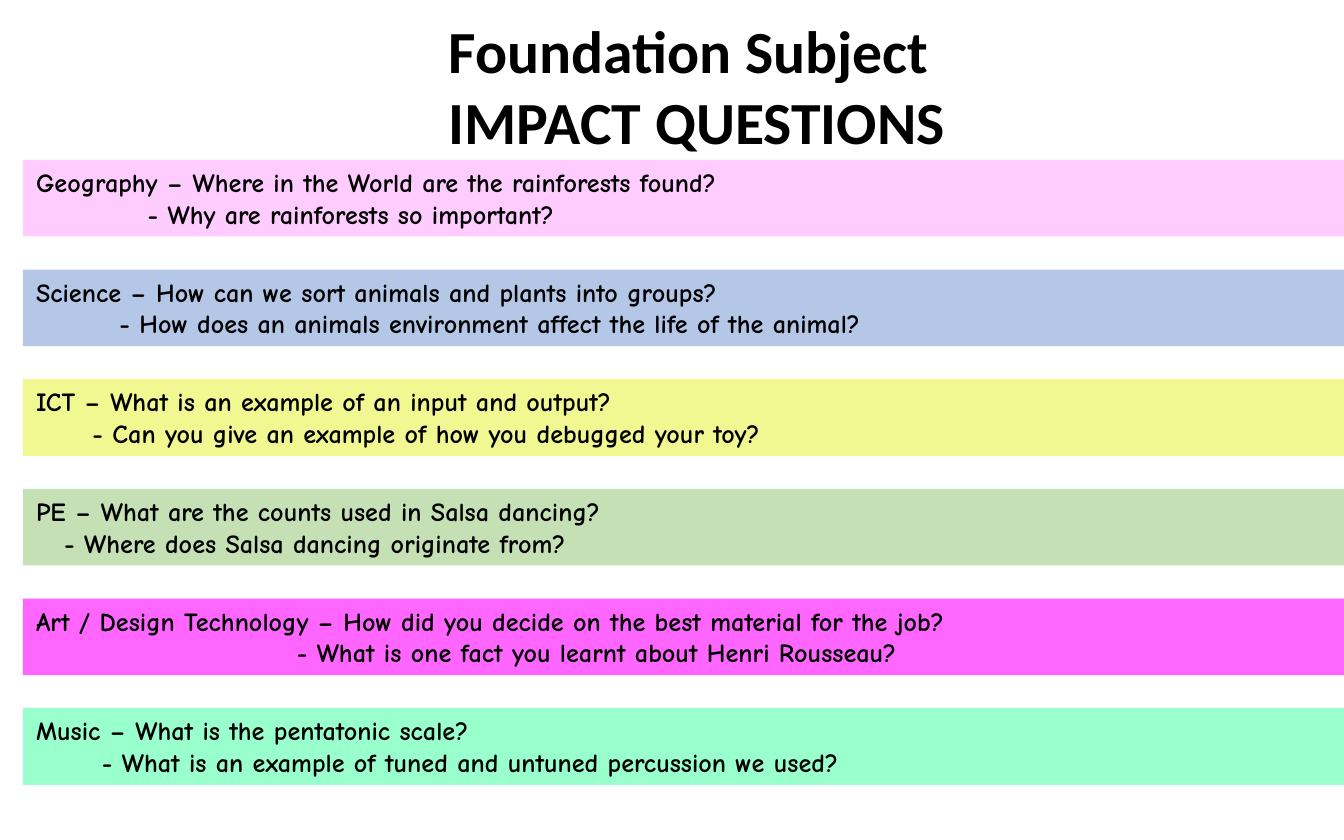
from pptx import Presentation
from pptx.dml.color import RGBColor
from pptx.enum.shapes import MSO_SHAPE
from pptx.enum.text import MSO_ANCHOR, PP_ALIGN
from pptx.util import Inches, Pt

RECT = MSO_SHAPE.RECTANGLE
TOP = MSO_ANCHOR.TOP
LEFT = PP_ALIGN.LEFT

SLIDE_W, SLIDE_H = 10, 6.25
BAR_LEFT, BAR_H = 0.17, 0.57
FIRST_TOP, LAST_TOP = 1.19, 5.27

SUBJECTS = [
    ("FFCCFF", 0.83, "Geography – Where in the World are the rainforests found?",
     "- Why are rainforests so important?"),
    ("B4C7E7", 0.62, "Science – How can we sort animals and plants into groups?",
     "- How does an animals environment affect the life of the animal?"),
    ("F1F892", 0.42, "ICT – What is an example of an input and output?",
     "- Can you give an example of how you debugged your toy?"),
    ("C5E0B4", 0.21, "PE – What are the counts used in Salsa dancing?",
     "- Where does Salsa dancing originate from?"),
    ("FF66FF", 1.94, "Art / Design Technology – How did you decide on the best material for the job?",
     "- What is one fact you learnt about Henri Rousseau?"),
    ("99FFCC", 0.49, "Music – What is the pentatonic scale?",
     "- What is an example of tuned and untuned percussion we used?"),
]


def rgb(value):
    return RGBColor.from_string(value)


def write(tf, text, font, size):
    tf.text = text
    tf.word_wrap = True
    tf.vertical_anchor = TOP
    for p in tf.paragraphs:
        p.alignment = LEFT
        for r in p.runs:
            r.font.name = font
            r.font.size = Pt(size)
            r.font.bold = True
            r.font.color.rgb = rgb("000000")


def add_title(s, text):
    tf = s.shapes.add_textbox(Inches(3.24), 0, Inches(4.19), Inches(0.5)).text_frame
    write(tf, text, "Calibri", 32)
    tf.margin_left = tf.margin_right = tf.margin_top = tf.margin_bottom = Inches(0.1)


def add_bar(s, top, color, indent, lines):
    sp = s.shapes.add_shape(RECT, Inches(BAR_LEFT), Inches(top),
                            Inches(SLIDE_W - BAR_LEFT), Inches(BAR_H))
    sp.shadow.inherit = False
    sp.fill.solid()
    sp.fill.fore_color.rgb = rgb(color)
    sp.line.fill.background()
    tf = sp.text_frame
    write(tf, "\n".join(lines), "Comic Neue", 14)
    pPr = tf.paragraphs[1]._p.get_or_add_pPr()
    pPr.set("marL", str(Inches(indent)))
    pPr.set("indent", "0")


def main():
    prs = Presentation()
    prs.slide_width, prs.slide_height = Inches(SLIDE_W), Inches(SLIDE_H)
    s = prs.slides.add_slide(prs.slide_layouts[6])
    add_title(s, "Foundation Subject IMPACT QUESTIONS")
    pitch = (LAST_TOP - FIRST_TOP) / (len(SUBJECTS) - 1)
    for i, (color, indent, *lines) in enumerate(SUBJECTS):
        add_bar(s, FIRST_TOP + i * pitch, color, indent, lines)
    prs.save("out.pptx")


if __name__ == "__main__":
    main()
